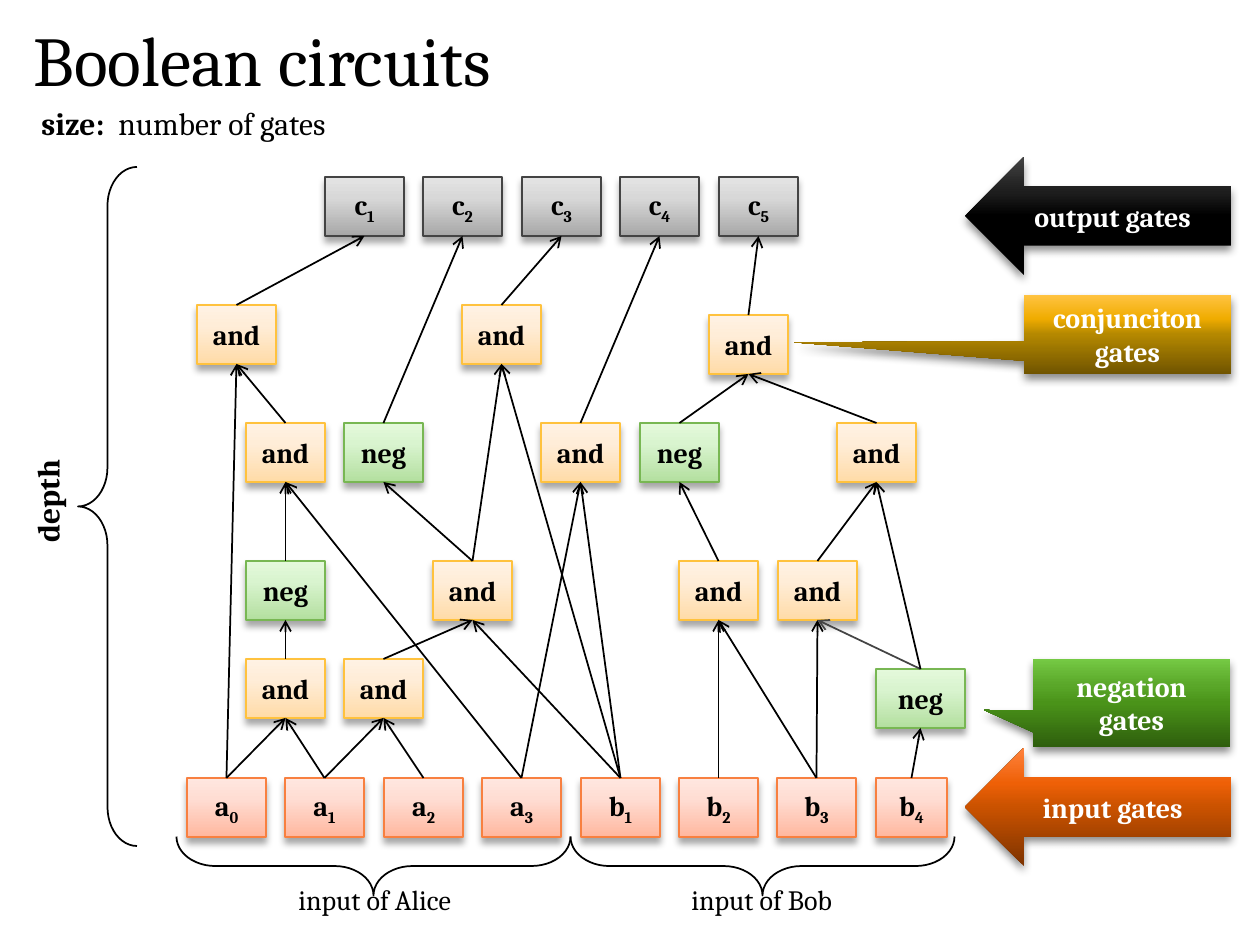
from dataclasses import dataclass

from lxml.etree import SubElement
from pptx import Presentation
from pptx.dml.color import RGBColor
from pptx.enum.shapes import MSO_CONNECTOR, MSO_SHAPE
from pptx.enum.text import MSO_ANCHOR, PP_ALIGN
from pptx.oxml.ns import qn
from pptx.util import Emu, Pt

EMU_PER_PX = 914400 / 126
BLACK, WHITE = "000000", "FFFFFF"
TOP_SITE, BOTTOM_SITE = 0, 2


@dataclass(frozen=True)
class Style:
    stops: tuple[tuple[int, str], ...]
    outline: str | None = None
    shadow_alpha: int = 35
    shadow_blur: int = 4


@dataclass(frozen=True)
class Gate:
    key: str
    label: str
    style: Style
    left: int
    top: int
    subscript: str = ""
    width: int = 79


@dataclass(frozen=True)
class Edge:
    source: str
    target: str
    color: str = BLACK


@dataclass(frozen=True)
class Legend:
    lines: tuple[str, ...]
    preset: MSO_SHAPE
    box: tuple[int, int, int, int]
    colors: tuple[str, str, str, str]
    adjustments: tuple[float, ...] = ()


@dataclass(frozen=True)
class Brace:
    box: tuple[int, int, int, int]
    rotation: int = 0


def gate_style(dark: str, middle: str, light: str, outline: str) -> Style:
    return Style(((0, dark), (65, middle), (100, light)), outline)


INPUT = gate_style("FFB79F", "FFDDD3", "FFE7E0", "F88040")
OUTPUT = gate_style("A7A7A7", "D8D8D8", "E4E4E4", "444444")
AND = gate_style("FFDBA7", "FFEDD8", "FFF2E4", "FFC23E")
NEG = gate_style("B3DF9F", "D9F4CF", "E4F9DB", "78B753")

INPUT_NAMES = ("a0", "a1", "a2", "a3", "b1", "b2", "b3", "b4")
INPUT_GATES = [
    Gate(name, name[0], INPUT, round(187 + 98.4 * column), 778, name[1],
         71 if name == "b4" else 79)
    for column, name in enumerate(INPUT_NAMES)
]
OUTPUT_GATES = [
    Gate(f"c{column + 1}", "c", OUTPUT, round(325 + 98.4 * column), 177, str(column + 1))
    for column in range(5)
]
LOGIC_GATES = [
    Gate("and a0 a1", "and", AND, 246, 659),
    Gate("and a1 a2", "and", AND, 344, 659),
    Gate("neg b4", "neg", NEG, 876, 669, width=89),
    Gate("neg left", "neg", NEG, 246, 561),
    Gate("and b1", "and", AND, 433, 561),
    Gate("and b2 b3", "and", AND, 679, 561),
    Gate("and b3 b4", "and", AND, 778, 561),
    Gate("and a3", "and", AND, 246, 423),
    Gate("neg middle", "neg", NEG, 344, 423),
    Gate("and a3 b1", "and", AND, 541, 423),
    Gate("neg right", "neg", NEG, 640, 423),
    Gate("and right", "and", AND, 837, 423),
    Gate("and c1", "and", AND, 197, 305),
    Gate("and c3", "and", AND, 462, 305),
    Gate("and c5", "and", AND, 709, 315),
]
WIRING = {
    "and a0 a1": ("a0", "a1"),
    "and a1 a2": ("a1", "a2"),
    "neg b4": ("b4",),
    "neg left": ("and a0 a1",),
    "and b1": ("and a1 a2", "b1"),
    "and b2 b3": ("b2", "b3"),
    "and b3 b4": ("b3", "neg b4"),
    "and a3": ("neg left", "a3"),
    "neg middle": ("and b1",),
    "and a3 b1": ("a3", "b1"),
    "neg right": ("and b2 b3",),
    "and right": ("and b3 b4", "neg b4"),
    "and c1": ("a0", "and a3"),
    "and c3": ("and b1", "b1"),
    "and c5": ("neg right", "and right"),
    "c1": ("and c1",),
    "c2": ("neg middle",),
    "c3": ("and c3",),
    "c4": ("and a3 b1",),
    "c5": ("and c5",),
}
EDGES = [
    Edge(source, target, "444444" if (source, target) == ("neg b4", "and b3 b4") else BLACK)
    for target, sources in WIRING.items()
    for source in sources
]
LEGENDS = [
    Legend(("input gates",), MSO_SHAPE.LEFT_ARROW, (965, 748, 266, 118),
           ("7D3300", "CA5200", "EE6007", "FF823D")),
    Legend(("output gates",), MSO_SHAPE.LEFT_ARROW, (965, 157, 266, 118),
           (BLACK, BLACK, "1D1D1D", "424242")),
    Legend(("conjunciton", "gates"), MSO_SHAPE.RECTANGULAR_CALLOUT, (1024, 295, 207, 79),
           ("705400", "B48800", "F0AC00", "FFC342"), (-1.61, 0.1)),
    Legend(("negation gates",), MSO_SHAPE.RECTANGULAR_CALLOUT, (1033, 659, 197, 88),
           ("2E5E0D", "4A9319", "5AA729", "75C944"), (-0.75, 0.08)),
]
BRACES = [
    Brace((78, 167, 59, 679)),
    Brace((344, 669, 59, 394), 270),
    Brace((733, 674, 59, 384), 270),
]


def px(length: float) -> Emu:
    return Emu(round(length * EMU_PER_PX))


def rgb(color: str) -> RGBColor:
    return RGBColor.from_string(color)


def write(paragraph, text: str, *, size=16, bold=False, color=BLACK, subscript=False):
    run = paragraph.add_run()
    run.text = text
    font = run.font
    font.name, font.size, font.bold = "Cambria", Pt(size), bold
    font.color.rgb = rgb(color)
    if subscript:
        font._element.set("baseline", "-25000")


def add_color(parent, color: str):
    return SubElement(parent, qn("a:srgbClr"), val=color)


def apply_style(shape, style: Style) -> None:
    shape.fill.gradient()
    shape.fill.gradient_angle = 90
    stop_list = shape._element.spPr.find(".//" + qn("a:gsLst"))
    for stop in list(stop_list):
        stop_list.remove(stop)
    for position, color in style.stops:
        add_color(SubElement(stop_list, qn("a:gs"), pos=str(position * 1000)), color)
    if style.outline:
        shape.line.color.rgb = rgb(style.outline)
        shape.line.width = Pt(1)
    else:
        shape.line.fill.background()
    shape.shadow.inherit = False
    effects = shape._element.spPr.find(qn("a:effectLst"))
    shadow = SubElement(effects, qn("a:outerShdw"), blurRad=str(Pt(style.shadow_blur)),
                        dist=str(Pt(3)), dir="5400000", rotWithShape="0")
    SubElement(add_color(shadow, BLACK), qn("a:alpha"), val=str(style.shadow_alpha * 1000))


def add_block(slide, preset, box, style: Style):
    shape = slide.shapes.add_shape(preset, *map(px, box))
    apply_style(shape, style)
    shape.text_frame.vertical_anchor = MSO_ANCHOR.MIDDLE
    return shape


def draw_gate(slide, gate: Gate):
    shape = add_block(slide, MSO_SHAPE.RECTANGLE, (gate.left, gate.top, gate.width, 59), gate.style)
    paragraph = shape.text_frame.paragraphs[0]
    paragraph.alignment = PP_ALIGN.CENTER
    write(paragraph, gate.label, bold=True)
    if gate.subscript:
        write(paragraph, gate.subscript, bold=True, subscript=True)
    return shape


def draw_edge(slide, edge: Edge, gates: dict) -> None:
    wire = slide.shapes.add_connector(MSO_CONNECTOR.STRAIGHT, 0, 0, 0, 0)
    wire.begin_connect(gates[edge.source], TOP_SITE)
    wire.end_connect(gates[edge.target], BOTTOM_SITE)
    wire.line.color.rgb = rgb(edge.color)
    wire.line.width = Pt(1)
    SubElement(wire.line._get_or_add_ln(), qn("a:tailEnd"), type="arrow")
    SubElement(wire._element.spPr, qn("a:effectLst"))


def draw_legend(slide, legend: Legend) -> None:
    style = Style(tuple(zip((0, 50, 70, 100), legend.colors)), None, 45, 5)
    shape = add_block(slide, legend.preset, legend.box, style)
    for index, value in enumerate(legend.adjustments):
        shape.adjustments[index] = value
    frame = shape.text_frame
    for index, line in enumerate(legend.lines):
        paragraph = frame.add_paragraph() if index else frame.paragraphs[0]
        paragraph.alignment = PP_ALIGN.CENTER
        write(paragraph, line, bold=True, color=WHITE)


def draw_brace(slide, brace: Brace) -> None:
    shape = slide.shapes.add_shape(MSO_SHAPE.LEFT_BRACE, *map(px, brace.box))
    shape.rotation = brace.rotation
    shape.adjustments[0] = 0.66
    shape.fill.background()
    shape.line.color.rgb = rgb(BLACK)
    shape.line.width = Pt(1)
    shape.shadow.inherit = False


def add_caption(slide, box, rotation: int = 0):
    caption = slide.shapes.add_textbox(*map(px, box))
    caption.rotation = rotation
    caption.text_frame.word_wrap = True
    return caption.text_frame.paragraphs[0]


def main() -> None:
    deck = Presentation()
    deck.slide_width, deck.slide_height = px(1260), px(945)
    slide = deck.slides.add_slide(deck.slide_layouts[5])

    title = slide.shapes.title
    title.left, title.top, title.width, title.height = map(px, (21, 0, 1172, 128))
    title.text_frame.vertical_anchor = MSO_ANCHOR.MIDDLE
    heading = title.text_frame.paragraphs[0]
    heading.alignment, heading.line_spacing = PP_ALIGN.LEFT, 0.9
    write(heading, "Boolean circuits", size=40)

    gates = {gate.key: draw_gate(slide, gate)
             for gate in INPUT_GATES + LOGIC_GATES + OUTPUT_GATES}
    for edge in EDGES:
        draw_edge(slide, edge, gates)
    for legend in LEGENDS:
        draw_legend(slide, legend)
    for brace in BRACES:
        draw_brace(slide, brace)

    write(add_caption(slide, (-9, 474, 112, 50), 270), "depth", size=18, bold=True)
    size_note = add_caption(slide, (29, 98, 374, 50))
    write(size_note, "size: ", size=18, bold=True)
    write(size_note, " number of gates", size=18)
    write(add_caption(slide, (286, 876, 185, 47)), "input of Alice")
    write(add_caption(slide, (679, 876, 174, 47)), "input of Bob")
    deck.save("out.pptx")


if __name__ == "__main__":
    main()
